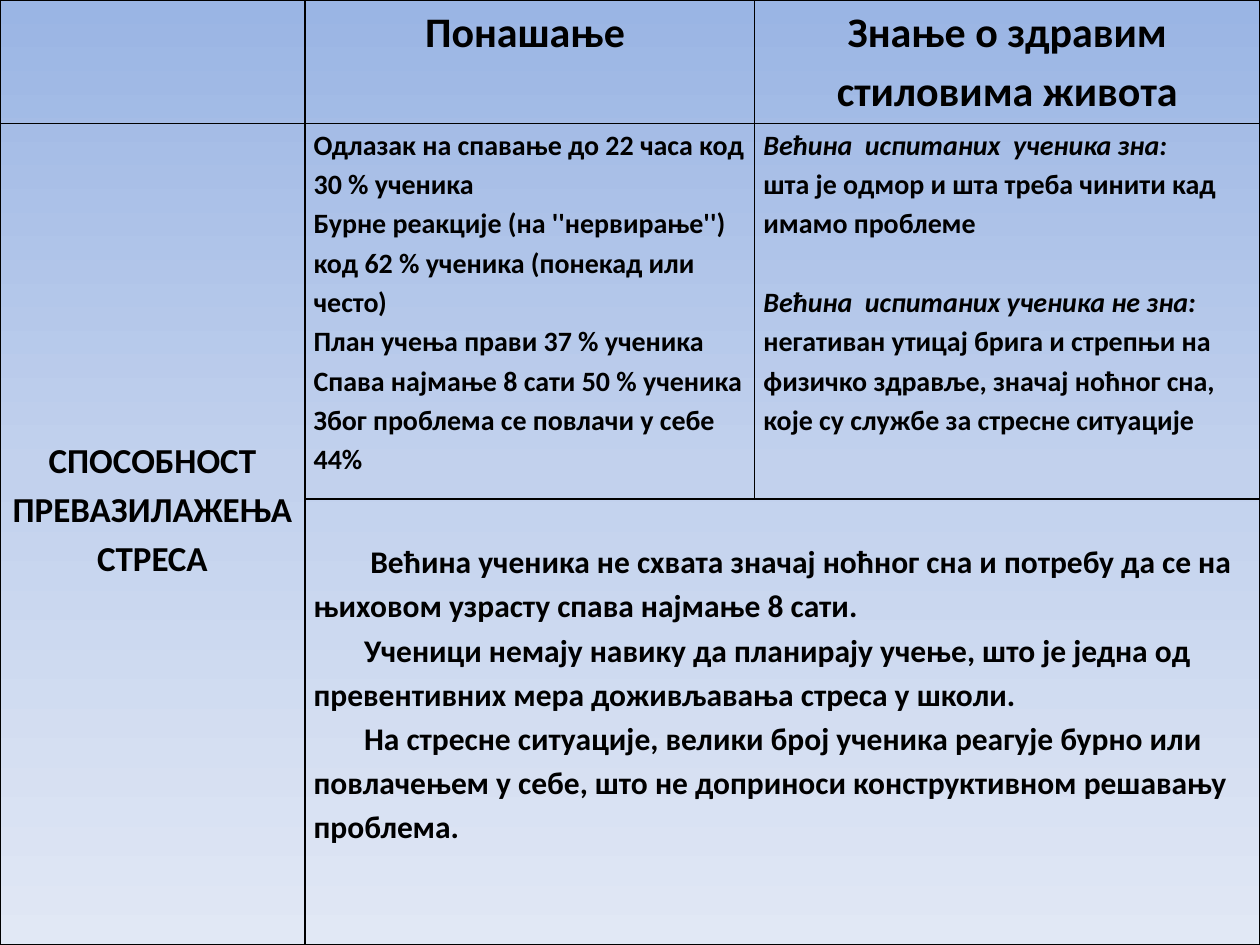
from copy import deepcopy
from dataclasses import dataclass

from lxml.etree import SubElement
from pptx import Presentation
from pptx.dml.color import RGBColor as Color
from pptx.enum.text import MSO_ANCHOR as Anchor, PP_ALIGN as Align
from pptx.oxml.ns import qn
from pptx.util import Inches, Pt


@dataclass(frozen=True)
class Theme:
    font: str = "Calibri"
    ink: str = "000000"
    backdrop: tuple = ((0, "9AB5E4"), (0.5, "C2D1ED"), (1, "E1E8F5"))
    heading: int = 24
    label: int = 20
    findings: int = 16
    summary: int = 18
    line_spacing: float = 1.15
    border: int = 1


THEME = Theme()
COLUMNS = (2.42, 3.57, 4.01)
ROWS = (0.98, 2.98, 3.54)
HEADINGS = ("Понашање ", "Знање о здравим стиловима живота")
LABEL = "СПОСОБНОСТ ПРЕВАЗИЛАЖЕЊА СТРЕСА"
BEHAVIOUR = (
    "Одлазак на спавање до 22 часа код 30 % ученика",
    "Бурне реакције (на ''нервирање'') код 62 % ученика (понекад или често)",
    "План учења прави 37 % ученика",
    "Спава најмање 8 сати 50 % ученика",
    "Због проблема се повлачи у себе 44%",
)
KNOWLEDGE = (
    "Већина  испитаних  ученика зна:",
    "шта је одмор и шта треба чинити кад имамо проблеме",
    "Већина  испитаних ученика не зна:",
    "негативан утицај брига и стрепњи на физичко здравље, значај ноћног сна, "
    "које су службе за стресне ситуације",
)
SUMMARY = (
    "Већина ученика не схвата значај ноћног сна и потребу да се на њиховом "
    "узрасту спава најмање 8 сати.",
    "Ученици немају навику да планирају учење, што је једна од превентивних "
    "мера доживљавања стреса у школи.",
    "На стресне ситуације, велики број ученика реагује бурно или повлачењем "
    "у себе, што не доприноси конструктивном решавању проблема.",
)


def apply(target, values):
    for name, value in values.items():
        setattr(target, name, value)


def paint_backdrop(page):
    fill = page.background.fill
    fill.gradient()
    fill.gradient_angle = 270
    stops = page.element.find(".//" + qn("a:gsLst"))
    stops.append(deepcopy(stops[0]))
    for stop, (position, color) in zip(fill.gradient_stops, THEME.backdrop):
        stop.position = position
        stop.color.rgb = Color.from_string(color)


def frame_cell(cell):
    apply(cell, {
        "margin_left": Inches(0.07), "margin_right": Inches(0.07),
        "margin_top": 0, "margin_bottom": 0, "vertical_anchor": Anchor.TOP,
    })
    properties = cell._tc.get_or_add_tcPr()
    for side in ("lnL", "lnR", "lnT", "lnB"):
        line = SubElement(properties, qn(f"a:{side}"), w=str(Pt(THEME.border)))
        solid = SubElement(line, qn("a:solidFill"))
        SubElement(solid, qn("a:srgbClr"), val=THEME.ink)
    cell.fill.background()


def write_cell(cell, lines, size, align=Align.LEFT, top=0):
    cell.margin_top = Inches(top)
    frame = cell.text_frame
    frame.text = "\n".join(lines)
    for para in frame.paragraphs:
        apply(para, {"alignment": align, "line_spacing": THEME.line_spacing})
        for span in para.runs:
            apply(span.font, {"name": THEME.font, "size": Pt(size), "bold": True})
            span.font.color.rgb = Color.from_string(THEME.ink)
    return frame.paragraphs


def write_headings(table):
    for column, heading in enumerate(HEADINGS, 1):
        write_cell(table.cell(0, column), [heading], THEME.heading, Align.CENTER)


def write_findings(table):
    write_cell(table.cell(1, 1), BEHAVIOUR, THEME.findings)
    paras = write_cell(table.cell(1, 2), KNOWLEDGE, THEME.findings)
    for para in paras[::2]:
        para.runs[0].font.italic = True
    paras[2].space_before = Pt(22.4)


def write_summary(table):
    paras = write_cell(table.cell(2, 1), SUMMARY, THEME.summary, top=0.31)
    for number, para in enumerate(paras):
        indent = Inches(0.4 if number else 0.45)
        para._p.get_or_add_pPr().set("indent", str(indent))


def add_stress_table(page, left, top, width, height):
    table = page.shapes.add_table(
        len(ROWS), len(COLUMNS), left, top, width, height).table
    apply(table, {"first_row": False, "horz_banding": False})
    for column, size in zip(table.columns, COLUMNS):
        column.width = Inches(size)
    for row, size in zip(table.rows, ROWS):
        row.height = Inches(size)
    for cell in table.iter_cells():
        frame_cell(cell)
    table.cell(1, 0).merge(table.cell(2, 0))
    table.cell(2, 1).merge(table.cell(2, 2))
    write_headings(table)
    write_cell(table.cell(1, 0), [LABEL], THEME.label, Align.CENTER, top=2.46)
    write_findings(table)
    write_summary(table)


def main():
    deck = Presentation()
    apply(deck, {"slide_width": Inches(10), "slide_height": Inches(7.5)})
    page = deck.slides.add_slide(deck.slide_layouts[6])
    paint_backdrop(page)
    add_stress_table(page, 0, 0, deck.slide_width, deck.slide_height)
    deck.save("out.pptx")


if __name__ == "__main__":
    main()
